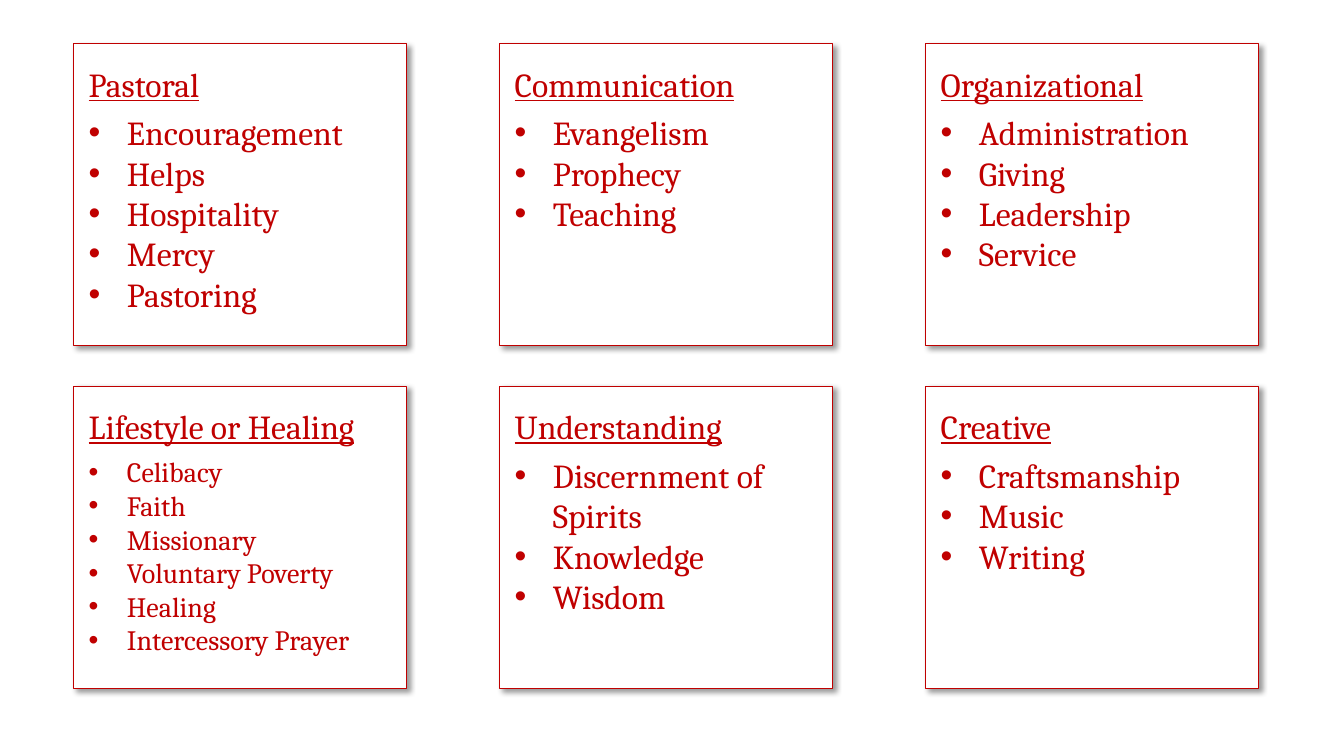
import pptx
import pptx.dml.color
import pptx.enum.shapes
import pptx.enum.text
import pptx.oxml
import pptx.oxml.ns
import pptx.util

Inch = pptx.util.Inches
Pt = pptx.util.Pt

# Gift groups: title, size of the list, gifts
GROUPS = [
    ("Pastoral", 24, ["Encouragement", "Helps", "Hospitality", "Mercy", "Pastoring"]),
    ("Communication", 24, ["Evangelism", "Prophecy", "Teaching"]),
    ("Organizational", 24, ["Administration", "Giving", "Leadership", "Service"]),
    ("Lifestyle or Healing", 20, ["Celibacy", "Faith", "Missionary", "Voluntary Poverty",
                                  "Healing", "Intercessory Prayer"]),
    ("Understanding", 24, ["Discernment of Spirits", "Knowledge", "Wisdom"]),
    ("Creative", 24, ["Craftsmanship", "Music", "Writing"]),
]


def color(code):
    return pptx.dml.color.RGBColor.from_string(code)


def node(xml):
    head, rest = xml.split(" ", 1)
    return pptx.oxml.parse_xml(f"{head} {pptx.oxml.ns.nsdecls('a')} {rest}")


class Board:
    font = "Cambria"
    red = "C00000"
    white = "FFFFFF"
    # Grid: first cell, cell size and step between cells
    left, top = 0.73, 0.43
    wide, high = 3.3, 3
    step_x, step_y = 4.225, 3.4
    indent = 0.38

    def __init__(self, slide):
        self.slide = slide

    def shade(self, box):
        effects = box._element.spPr.find(pptx.oxml.ns.qn("a:effectLst"))
        effects.append(node(
            f'<a:outerShdw blurRad="{Pt(4)}" dist="{Pt(3)}" dir="{45 * 60000}" '
            'algn="tl" rotWithShape="0"><a:srgbClr val="000000">'
            '<a:alpha val="40000"/></a:srgbClr></a:outerShdw>'))

    def line(self, para, text, size, under=False):
        para.text = text
        para.alignment = pptx.enum.text.PP_ALIGN.LEFT
        for run in para.runs:
            run.font.name = self.font
            run.font.size = Pt(size)
            run.font.underline = under
            run.font.color.rgb = color(self.red)

    def bullet(self, para):
        props = para._p.get_or_add_pPr()
        props.set("marL", str(Inch(self.indent)))
        props.set("indent", str(-Inch(self.indent)))
        props.append(node('<a:buFont typeface="Arial"/>'))
        props.append(node('<a:buChar char="•"/>'))

    def card(self, col, row, title, size, items):
        # Framed box
        box = self.slide.shapes.add_shape(
            pptx.enum.shapes.MSO_SHAPE.RECTANGLE,
            Inch(self.left + col * self.step_x), Inch(self.top + row * self.step_y),
            Inch(self.wide), Inch(self.high))
        box.shadow.inherit = False
        box.fill.solid()
        box.fill.fore_color.rgb = color(self.white)
        box.line.color.rgb = color(self.red)
        box.line.width = Pt(0.75)
        self.shade(box)

        # Title and list
        frame = box.text_frame
        frame.word_wrap = True
        frame.vertical_anchor = pptx.enum.text.MSO_ANCHOR.TOP
        frame.margin_left = frame.margin_right = Inch(0.15)
        frame.margin_top = frame.margin_bottom = Inch(0.2)
        head = frame.paragraphs[0]
        self.line(head, title, 24, under=True)
        head.space_after = Pt(6)
        for item in items:
            para = frame.add_paragraph()
            self.bullet(para)
            self.line(para, item, size)


def main():
    deck = pptx.Presentation()
    deck.slide_width = Inch(13.33)
    deck.slide_height = Inch(7.5)
    board = Board(deck.slides.add_slide(deck.slide_layouts[6]))

    # Three cards to a row
    for spot, group in enumerate(GROUPS):
        row, col = divmod(spot, 3)
        board.card(col, row, *group)

    deck.save("out.pptx")


if __name__ == "__main__":
    main()
